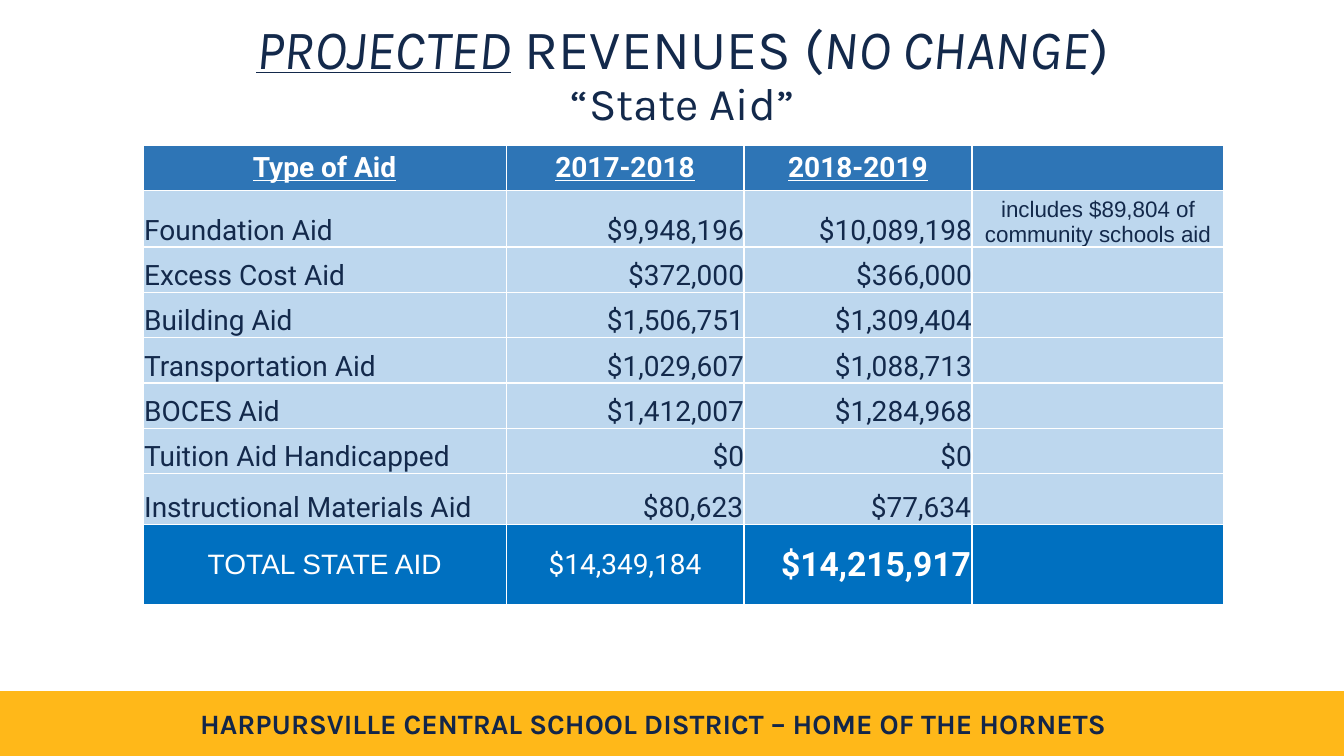
"""Build the projected state aid revenue slide."""
from dataclasses import dataclass
from typing import Optional

from lxml.etree import SubElement
from pptx import Presentation
from pptx.dml.color import RGBColor
from pptx.enum.shapes import MSO_SHAPE as Shape
from pptx.enum.text import MSO_ANCHOR as Anchor, MSO_AUTO_SIZE as AutoSize, PP_ALIGN as Align
from pptx.oxml.ns import qn
from pptx.util import Inches, Pt

NAVY, WHITE, GOLD = "13294B", "FFFFFF", "FFB819"
HEADER_BLUE, BODY_BLUE, TOTAL_BLUE = "2E75B6", "BDD7EE", "0070C0"
TITLE_SIZE, SUBTITLE_SIZE = 39.6, 32.4
COLUMN_WIDTHS = (3.6, 2.36, 2.26, 2.5)


@dataclass
class CellText:
    text: str
    align: Align = Align.LEFT
    size: float = 20
    font: str = "Roboto"
    bold: bool = False
    underline: bool = False
    inset: float = 0.01


@dataclass
class AidRow:
    height: float
    cells: list[Optional[CellText]]
    fill: str = BODY_BLUE
    color: str = NAVY
    anchor: Anchor = Anchor.BOTTOM


def rgb(value: str) -> RGBColor:
    return RGBColor.from_string(value)


def add_text(paragraph, text: str, *, size: float, font: str, color: str,
             bold: bool = False, italic: bool = False, underline: bool = False) -> None:
    run = paragraph.add_run()
    run.text = text
    run.font.size, run.font.name = Pt(size), font
    run.font.bold, run.font.italic, run.font.underline = bold, italic, underline
    run.font.color.rgb = rgb(color)


def set_insets(target, side: float, bottom: float = 0) -> None:
    target.margin_left = target.margin_right = target.margin_top = Inches(side)
    target.margin_bottom = Inches(bottom)


def add_borders(cell, color: str, width: float) -> None:
    properties = cell._tc.get_or_add_tcPr()
    for side in ("lnL", "lnR", "lnT", "lnB"):
        line = SubElement(properties, qn(f"a:{side}"), w=str(Pt(width)))
        SubElement(SubElement(line, qn("a:solidFill")), qn("a:srgbClr"), val=color)


def add_footer(slide) -> None:
    band = slide.shapes.add_shape(Shape.RECTANGLE, 0, Inches(6.86), Inches(13.33), Inches(0.63))
    band.shadow.inherit = False
    band.fill.solid()
    band.fill.fore_color.rgb = band.line.color.rgb = rgb(GOLD)
    band.line.width = Pt(1)
    box = slide.shapes.add_textbox(Inches(1.76), Inches(6.96), Inches(9.44), Inches(0.44))
    box.text_frame.word_wrap = True
    paragraph = box.text_frame.paragraphs[0]
    paragraph.alignment = Align.CENTER
    add_text(paragraph, "HARPURSVILLE CENTRAL SCHOOL DISTRICT – HOME OF THE HORNETS",
             size=20, font="Karla", color="132649", bold=True)


def fill_title(title) -> None:
    title.left, title.top = Inches(1.02), Inches(0.23)
    title.width, title.height = Inches(11.5), Inches(1.04)
    title.fill.solid()
    title.fill.fore_color.rgb = rgb(WHITE)
    frame = title.text_frame
    frame.word_wrap, frame.auto_size = True, AutoSize.NONE
    frame.vertical_anchor = Anchor.MIDDLE
    paragraph = frame.paragraphs[0]
    paragraph.alignment, paragraph.line_spacing = Align.CENTER, 0.9
    style = {"font": "Karla", "color": NAVY}
    add_text(paragraph, "PROJECTED", size=TITLE_SIZE, italic=True, underline=True, **style)
    add_text(paragraph, " REVENUES (", size=TITLE_SIZE, **style)
    add_text(paragraph, "NO CHANGE", size=TITLE_SIZE, italic=True, **style)
    add_text(paragraph, ")", size=TITLE_SIZE, **style)
    paragraph.add_line_break()
    line_break = paragraph._p.find(qn("a:br"))
    SubElement(line_break, qn("a:rPr"), sz=str(round(TITLE_SIZE * 100)))
    add_text(paragraph, "“State Aid”", size=SUBTITLE_SIZE, **style)


def fill_cell(cell, content: Optional[CellText], row: AidRow) -> None:
    add_borders(cell, WHITE, 1)
    cell.fill.solid()
    cell.fill.fore_color.rgb = rgb(row.fill)
    if content is None:
        return
    cell.vertical_anchor = row.anchor
    set_insets(cell, content.inset)
    paragraph = cell.text_frame.paragraphs[0]
    paragraph.alignment = content.align
    add_text(paragraph, content.text, size=content.size, font=content.font, color=row.color,
             bold=content.bold, underline=content.underline)


def add_aid_table(slide, rows: list[AidRow]) -> None:
    frame = slide.shapes.add_table(
        len(rows), len(COLUMN_WIDTHS), Inches(1.42), Inches(1.44),
        Inches(sum(COLUMN_WIDTHS)), Inches(sum(row.height for row in rows)))
    table = frame.table
    for column, width in zip(table.columns, COLUMN_WIDTHS):
        column.width = Inches(width)
    for table_row, row in zip(table.rows, rows):
        table_row.height = Inches(row.height)
        for cell, content in zip(table_row.cells, row.cells):
            fill_cell(cell, content, row)


def heading(text: str) -> CellText:
    return CellText(text, Align.CENTER, bold=True, underline=True)


def aid_row(name: str, previous: str, projected: str, height: float = 0.45,
            note: Optional[CellText] = None, inset: float = 0) -> AidRow:
    amounts = [CellText(amount, Align.RIGHT, inset=inset) for amount in (previous, projected)]
    return AidRow(height, [CellText(name), *amounts, note])


def main() -> None:
    presentation = Presentation()
    presentation.slide_width, presentation.slide_height = Inches(13.33), Inches(7.5)
    slide = presentation.slides.add_slide(presentation.slide_layouts[5])
    community_note = CellText("includes $89,804 of community schools aid",
                              Align.CENTER, size=16, font="Arial")
    rows = [
        AidRow(0.45, [heading("Type of Aid"), heading("2017-2018"), heading("2018-2019"), None],
               HEADER_BLUE, WHITE, Anchor.MIDDLE),
        aid_row("Foundation Aid", "$9,948,196", "$10,089,198", 0.56, community_note),
        aid_row("Excess Cost Aid", "$372,000", "$366,000"),
        aid_row("Building Aid", "$1,506,751", "$1,309,404"),
        aid_row("Transportation Aid", "$1,029,607", "$1,088,713"),
        aid_row("BOCES Aid", "$1,412,007", "$1,284,968"),
        aid_row("Tuition Aid Handicapped", "$0", "$0"),
        aid_row("Instructional Materials Aid", "$80,623", "$77,634", 0.5, inset=0.01),
        AidRow(0.8, [CellText("TOTAL STATE AID", Align.CENTER, font="Arial"),
                     CellText("$14,349,184", Align.CENTER),
                     CellText("$14,215,917", Align.RIGHT, size=24, bold=True), None],
               TOTAL_BLUE, WHITE, Anchor.MIDDLE),
    ]
    add_footer(slide)
    fill_title(slide.shapes.title)
    add_aid_table(slide, rows)
    presentation.save("out.pptx")


if __name__ == "__main__":
    main()
